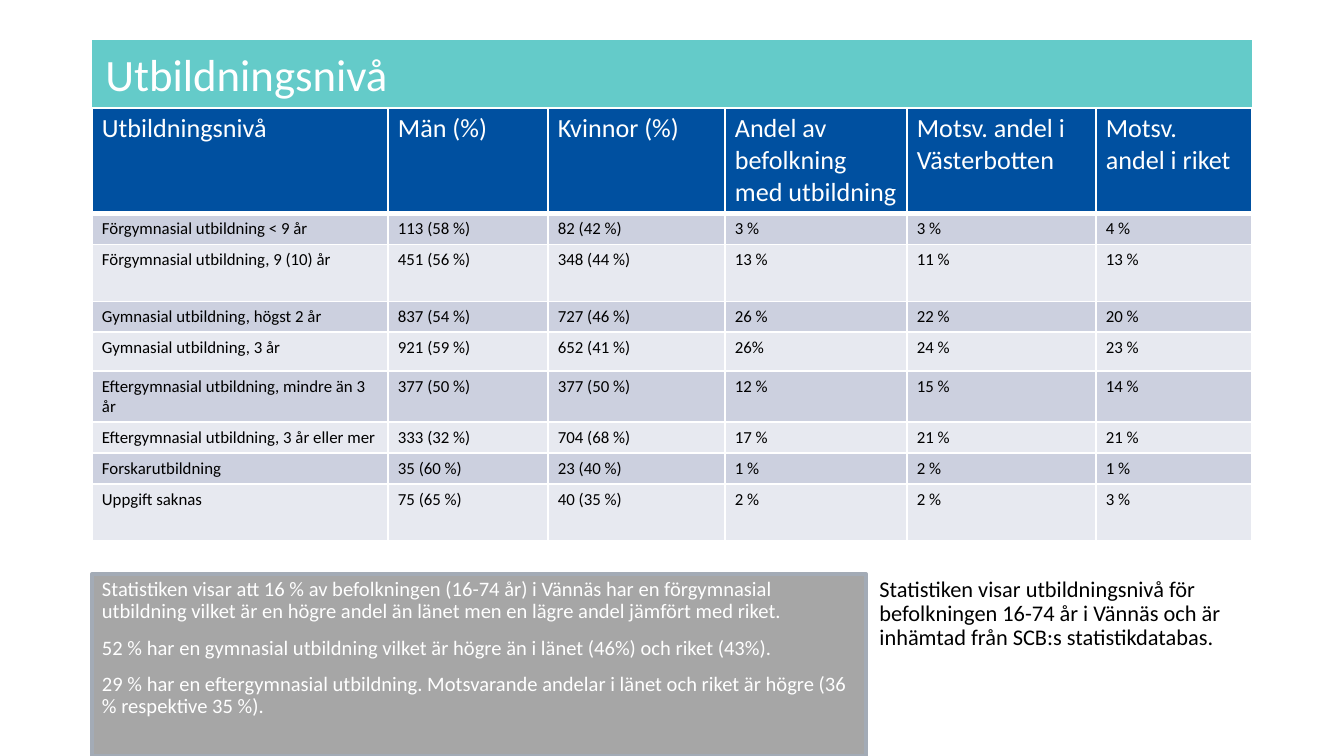
from pptx import Presentation
from pptx.dml.color import RGBColor
from pptx.enum.shapes import MSO_SHAPE
from pptx.enum.text import MSO_ANCHOR, MSO_AUTO_SIZE, PP_ALIGN
from pptx.oxml.ns import qn
from pptx.util import Emu, Pt
from lxml.etree import SubElement

# Content
TITLE = "Utbildningsnivå"
ROWS = [
    ("Utbildningsnivå", "Män (%)", "Kvinnor (%)", "Andel av befolkning med utbildning",
     "Motsv. andel i Västerbotten", "Motsv. andel i riket"),
    ("Förgymnasial utbildning < 9 år", "113 (58 %)", "82 (42 %)", "3 %", "3 %", "4 %"),
    ("Förgymnasial utbildning, 9 (10) år", "451 (56 %)", "348 (44 %)", "13 %", "11 %", "13 %"),
    ("Gymnasial utbildning, högst 2 år", "837 (54 %)", "727 (46 %)", "26 %", "22 %", "20 %"),
    ("Gymnasial utbildning, 3 år", "921 (59 %)", "652 (41 %)", "26%", "24 %", "23 %"),
    ("Eftergymnasial utbildning, mindre än 3 år", "377 (50 %)", "377 (50 %)",
     "12 %", "15 %", "14 %"),
    ("Eftergymnasial utbildning, 3 år eller mer", "333 (32 %)", "704 (68 %)",
     "17 %", "21 %", "21 %"),
    ("Forskarutbildning", "35 (60 %)", "23 (40 %)", "1 %", "2 %", "1 %"),
    ("Uppgift saknas", "75 (65 %)", "40 (35 %)", "2 %", "2 %", "3 %"),
]
FACTS = [
    "Statistiken visar att 16 % av befolkningen (16-74 år) i Vännäs har en förgymnasial "
    "utbildning vilket är en högre andel än länet men en lägre andel jämfört med riket.",
    "52 % har en gymnasial utbildning vilket är högre än i länet (46%) och riket (43%).",
    "29 % har en eftergymnasial utbildning. Motsvarande andelar i länet och riket är högre "
    "(36 % respektive 35 %).",
]
SOURCE = [
    "Statistiken visar utbildningsnivå för befolkningen 16-74 år i Vännäs och är "
    "inhämtad från SCB:s statistikdatabas.",
]

THEME = {
    "font": "Calibri",
    "white": "FFFFFF", "black": "000000", "teal": "64CBC9", "blue": "0050A0",
    "bands": ("E7E9F0", "CCD0DF"), "gray": "A6A6A6", "edge": "A3ABB6",
    "title": 24, "head": 14, "cell": 9, "facts": 11, "source": 12,
}

# Layout in px
WIDE, HIGH = 1344, 756
LEFT = 92
COLS = [296, 160, 177, 182, 189, 156]
LINES = [105, 31, 57, 31, 39, 51, 31, 31, 57]
PAD_X, PAD_Y = 10, 5


def px(n):
    return Emu(round(n * 914400 / 134.4))


def color(name):
    return RGBColor.from_string(THEME.get(name, name))


def paint(fill, name):
    fill.solid()
    fill.fore_color.rgb = color(name)


def place(shape, *box):
    shape.left, shape.top, shape.width, shape.height = map(px, box)


def style(par, size, tone):
    par.font.name = THEME["font"]
    par.font.size = Pt(THEME[size])
    par.font.color.rgb = color(tone)


def prose(frame, texts, size, tone, gap):
    frame.word_wrap = True
    frame.auto_size = MSO_AUTO_SIZE.NONE
    frame.vertical_anchor = MSO_ANCHOR.TOP
    for i, text in enumerate(texts):
        par = frame.paragraphs[0] if i == 0 else frame.add_paragraph()
        par.text = text
        par.alignment = PP_ALIGN.LEFT
        par.line_spacing = 0.9
        par.space_before = Pt(gap if i else 0)
        props = par._p.get_or_add_pPr()
        props.set("marL", "0")
        props.set("indent", "0")
        SubElement(props, qn("a:buNone"))
        style(par, size, tone)


def border(cell, side, width):
    line = SubElement(cell._tc.get_or_add_tcPr(), qn(f"a:ln{side}"), w=str(Pt(width)))
    fill = SubElement(line, qn("a:solidFill"))
    SubElement(fill, qn("a:srgbClr"), val=THEME["white"])


def pad(part):
    part.margin_left = part.margin_right = px(PAD_X)
    part.margin_top = part.margin_bottom = px(PAD_Y)


deck = Presentation()
deck.slide_width, deck.slide_height = px(WIDE), px(HIGH)
slide = deck.slides.add_slide(deck.slide_layouts[1])
shapes = slide.shapes

# Title bar
title = shapes.title
place(title, LEFT, 40, sum(COLS), 67)
paint(title.fill, "teal")
title.text_frame.text = TITLE
title.text_frame.auto_size = MSO_AUTO_SIZE.NONE
title.text_frame.vertical_anchor = MSO_ANCHOR.MIDDLE
head = title.text_frame.paragraphs[0]
head.alignment = PP_ALIGN.LEFT
style(head, "title", "white")

# Education table
table = shapes.add_table(len(ROWS), len(COLS), px(LEFT), px(108),
                         px(sum(COLS)), px(sum(LINES))).table
for col, width in zip(table.columns, COLS):
    col.width = px(width)
for r, (row, height) in enumerate(zip(ROWS, LINES)):
    table.rows[r].height = px(height)
    for c, text in enumerate(row):
        cell = table.cell(r, c)
        cell.text = text
        pad(cell)
        for side in "LRTB":
            border(cell, side, 3 if r == 0 and side == "B" else 1)
        paint(cell.fill, THEME["bands"][r % 2] if r else "blue")
        par = cell.text_frame.paragraphs[0]
        par.font.bold = False
        style(par, "cell" if r else "head", "black" if r else "white")

# Findings box
box = shapes.add_shape(MSO_SHAPE.RECTANGLE, px(LEFT), px(574), px(774), px(182))
box.shadow.inherit = False
paint(box.fill, "gray")
box.line.color.rgb = color("edge")
box.line.width = Pt(2)
pad(box.text_frame)
prose(box.text_frame, FACTS, "facts", "white", 7.5)

# Source note
note = slide.placeholders[1]
place(note, LEFT + 774, 571, 387, 145)
prose(note.text_frame, SOURCE, "source", "black", 0)

deck.save("out.pptx")
